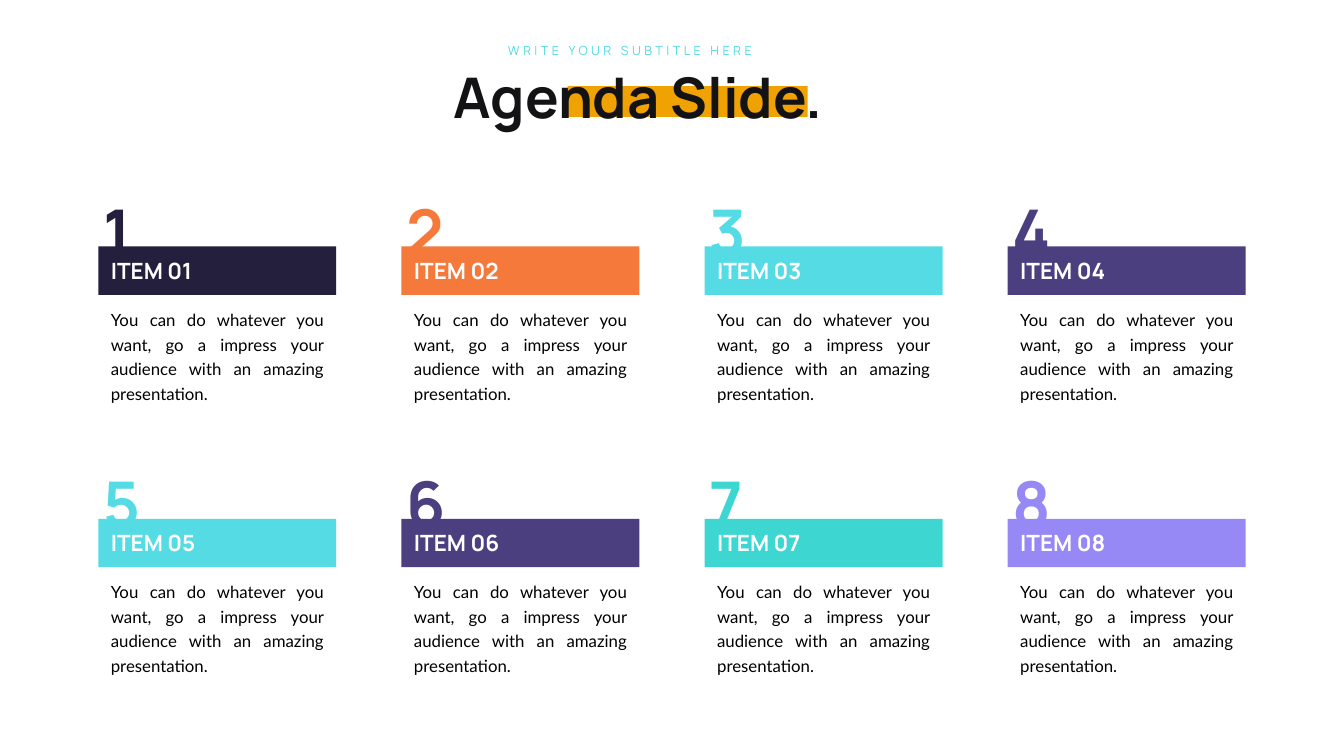
from pptx import Presentation
from pptx.dml.color import RGBColor
from pptx.enum.shapes import MSO_SHAPE
from pptx.enum.text import MSO_ANCHOR as Anchor, PP_ALIGN as Align
from pptx.util import Inches, Pt

COLORS = {
    "navy": "231F3D", "orange": "F6793C", "cyan": "55DBE4", "purple": "4C3F80",
    "teal": "3ED6D1", "lavender": "9688F5", "amber": "F0A202",
    "ink": "131316", "black": "000000", "white": "FFFFFF",
}
TITLE = "Agenda Slide."
SUBTITLE = "WRITE YOUR SUBTITLE HERE"
DESCRIPTION = ("You can do whatever you want, go a impress your audience "
               "with an amazing presentation.")
ITEM_COLORS = ["navy", "orange", "cyan", "purple",
               "cyan", "purple", "teal", "lavender"]

WIDTH, HEIGHT = 26.66, 15
COLUMNS = 4
GRID_LEFT, GRID_TOP = 1.95, 4.89
COLUMN_STEP, ROW_STEP = 6.013, 5.405
BAR_WIDTH, BAR_HEIGHT = 4.72, 0.96
INDENT = 0.15


def rgb(name):
    return RGBColor.from_string(COLORS[name])


def add_bar(slide, left, top, width, height, color):
    bar = slide.shapes.add_shape(
        MSO_SHAPE.RECTANGLE, Inches(left), Inches(top), Inches(width), Inches(height))
    bar.shadow.inherit = False
    bar.fill.solid()
    bar.fill.fore_color.rgb = rgb(color)
    bar.line.fill.background()


def add_text(slide, text, left, top, width, height, size, color,
             font="Manrope", bold=False, anchor=Anchor.TOP, align=Align.LEFT):
    box = slide.shapes.add_textbox(
        Inches(left), Inches(top), Inches(width), Inches(height))
    frame = box.text_frame
    frame.text = text
    frame.word_wrap = True
    frame.vertical_anchor = anchor
    paragraph = frame.paragraphs[0]
    paragraph.alignment = align
    style = paragraph.runs[0].font
    style.name, style.size, style.bold = font, Pt(size), bold
    style.color.rgb = rgb(color)
    return paragraph


def add_item(slide, index, color):
    row, column = divmod(index, COLUMNS)
    left = GRID_LEFT + column * COLUMN_STEP
    top = GRID_TOP + row * ROW_STEP
    inner_left, inner_width = left + INDENT, BAR_WIDTH - 2 * INDENT
    number = index + 1

    add_bar(slide, left, top, BAR_WIDTH, BAR_HEIGHT, color)
    add_text(slide, f"ITEM {number:02d}", inner_left, top + INDENT, 2, 0.64,
             32, "white", bold=True, anchor=Anchor.BOTTOM)
    description = add_text(slide, DESCRIPTION, inner_left, top + 1.12, inner_width, 2.01,
                           24, "black", font="Lato", align=Align.JUSTIFY)
    description.line_spacing = Pt(35)
    add_text(slide, str(number), left, top - 1.14, 1.02, 1.62,
             90, color, bold=True, anchor=Anchor.MIDDLE)


def main():
    presentation = Presentation()
    presentation.slide_width, presentation.slide_height = Inches(WIDTH), Inches(HEIGHT)
    slide = presentation.slides.add_slide(presentation.slide_layouts[6])

    for index, color in enumerate(ITEM_COLORS):
        add_item(slide, index, color)

    add_bar(slide, 11.26, 1.71, 4.76, 0.61, "amber")
    add_text(slide, TITLE, 8.89, 1.19, 8.1, 1.45, 80, "ink", bold=True)
    subtitle = add_text(slide, SUBTITLE, 8.95, 0.81, 7.09, 0.4, 18, "cyan",
                        anchor=Anchor.BOTTOM, align=Align.CENTER)
    subtitle.runs[0].font._element.set("spc", "500")

    presentation.save("out.pptx")


if __name__ == "__main__":
    main()
